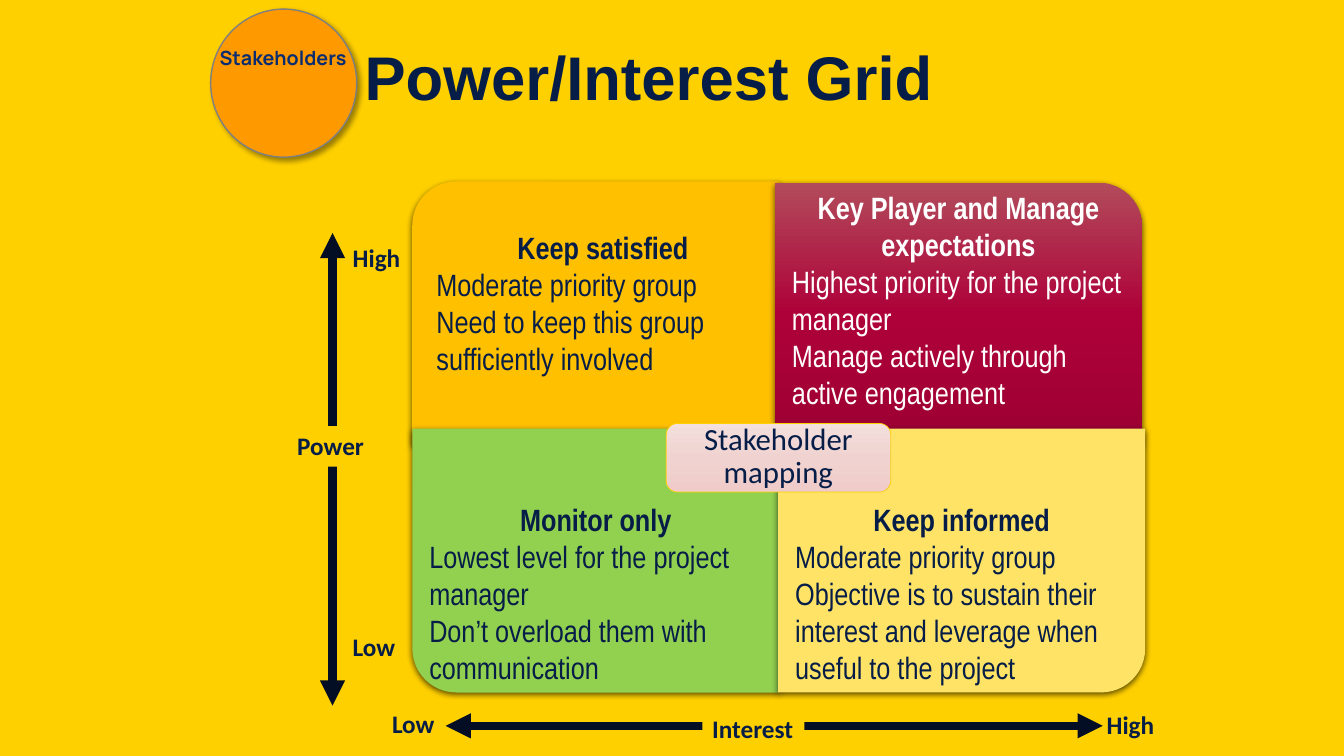
import copy

import lxml.etree
import pptx
import pptx.dml.color
import pptx.enum.dml
import pptx.enum.shapes
import pptx.enum.text
import pptx.oxml.ns
import pptx.util

Cm = pptx.util.Cm
Pt = pptx.util.Pt
qn = pptx.oxml.ns.qn
rgb = pptx.dml.color.RGBColor.from_string
Shape = pptx.enum.shapes.MSO_SHAPE
Align = pptx.enum.text.PP_ALIGN
Anchor = pptx.enum.text.MSO_ANCHOR
FIT = pptx.enum.text.MSO_AUTO_SIZE.SHAPE_TO_FIT_TEXT

theme = {
    "background": "FFD000",
    "navy": "061D48",
    "white": "FFFFFF",
    "axis": "030E24",
    "satisfied": "FFC000",
    "key_player": ["B24B5B", "AE0139", "9C0033"],
    "monitor": "92D050",
    "informed": "FFE366",
    "mapping": ["F4DFDD", "F0D3D0", "EFCCC9"],
    "badge": "FF9900",
    "badge_line": "808080",
    "badge_text": "092D70",
    "title": {"name": "Arial", "size": Pt(44), "bold": True},
    "label": {"name": "Calibri", "size": Pt(18), "bold": True},
    "quadrant": {"name": "Arial Narrow", "size": Pt(22), "bold": True},
    "centre": {"name": "Calibri", "size": Pt(22), "bold": False},
    "stakeholders": {"name": "Manrope", "size": Pt(14), "bold": True},
}

deck = pptx.Presentation()
deck.slide_width = Cm(33.87)
deck.slide_height = Cm(19.05)
page = deck.slides.add_slide(deck.slide_layouts[6])
page.background.fill.solid()
page.background.fill.fore_color.rgb = rgb(theme["background"])


def add_text(at, lines, font, colour, frame_format, para_format):
    box = page.shapes.add_textbox(*map(Cm, at))
    for name, value in frame_format.items():
        setattr(box.text_frame, name, value)
    for index, line in enumerate(lines):
        para = box.text_frame.paragraphs[0] if index == 0 else box.text_frame.add_paragraph()
        for name, value in para_format.items():
            setattr(para, name, value)
        span = para.add_run()
        span.text = line
        for name, value in font.items():
            setattr(span.font, name, value)
        span.font.color.rgb = rgb(colour)
        if index > 0:
            para.alignment = Align.LEFT
            span.font.bold = False
    return box


def add_panel(kind, at, fill, line=None, shadow=None):
    panel = page.shapes.add_shape(kind, *map(Cm, at))
    panel.shadow.inherit = False
    if isinstance(fill, list):
        panel.fill.gradient()
        panel.fill.gradient_angle = 270
        stops = panel._element.spPr.find(".//" + qn("a:gsLst"))
        stops.append(copy.deepcopy(stops[0]))
        for stop, position, colour in zip(panel.fill.gradient_stops, (0, 0.5, 1), fill):
            stop.position = position
            stop.color.rgb = rgb(colour)
    else:
        panel.fill.solid()
        panel.fill.fore_color.rgb = rgb(fill)
    if line:
        panel.line.color.rgb = rgb(line[0])
        panel.line.width = Pt(line[1])
    else:
        panel.line.fill.background()
    if shadow:
        alpha, blur, distance, angle = shadow
        effects = panel._element.spPr.find(qn("a:effectLst"))
        outer = lxml.etree.SubElement(
            effects, qn("a:outerShdw"), blurRad=str(Pt(blur)), dist=str(Pt(distance)),
            dir=str(angle * 60000), rotWithShape="0")
        tint = lxml.etree.SubElement(outer, qn("a:srgbClr"), val="000000")
        lxml.etree.SubElement(tint, qn("a:alpha"), val=str(alpha * 1000))
    return panel


add_text((8.94, 0.18, 21.13, 3.68), ["Power/Interest Grid"], theme["title"], theme["navy"],
         {"word_wrap": True, "vertical_anchor": Anchor.MIDDLE}, {"line_spacing": 0.9})

axes = [
    ((11.23, 18.29, 27.79, 18.29),
     [("Low", 9.63, 17.75, 1.75), ("High", 27.64, 17.78, 1.88), ("Interest", 17.7, 17.88, 2.57)]),
    ((8.38, 5.87, 8.38, 17.78),
     [("Low", 8.64, 15.8, 1.6), ("High", 8.64, 5.99, 1.73), ("Power", 7.24, 10.74, 2.21)]),
]
for ends, labels in axes:
    arrow = page.shapes.add_connector(pptx.enum.shapes.MSO_CONNECTOR.STRAIGHT, *map(Cm, ends))
    arrow.line.color.rgb = rgb(theme["axis"])
    arrow.line.width = Pt(6)
    for tip in ("a:headEnd", "a:tailEnd"):
        lxml.etree.SubElement(arrow.line._get_or_add_ln(), qn(tip), type="triangle")
    lxml.etree.SubElement(arrow._element.spPr, qn("a:effectLst"))
    for word, left, top, width in labels:
        label = add_text((left, top, width, 1.02), [word], theme["label"], theme["navy"],
                         {"word_wrap": False, "auto_size": FIT},
                         {"line_spacing": Pt(21), "space_after": Pt(12)})
        if word in ("Interest", "Power"):
            label.fill.solid()
            label.fill.fore_color.rgb = rgb(theme["background"])

quadrant_width, quadrant_height = 9.25, 6.65
quadrants = [
    (10.39, 4.57, 270, "satisfied", "navy", (10.57, 5.13),
     ["Keep satisfied", "Moderate priority group",
      "Need to keep this group sufficiently involved"]),
    (19.53, 4.6, 0, "key_player", "white", (19.53, 5.05),
     ["Key Player and Manage expectations", "Highest priority for the project manager",
      "Manage actively through active engagement"]),
    (10.39, 10.8, 180, "monitor", "navy", (10.39, 12.45),
     ["Monitor only", "Lowest level for the project manager",
      "Don’t overload them with communication"]),
    (19.61, 10.8, 90, "informed", "navy", (19.61, 12.45),
     ["Keep informed", "Moderate priority group",
      "Objective is to sustain their interest and leverage when useful to the project"]),
]
inset_sides = ("margin_left", "margin_top", "margin_right", "margin_bottom")
quadrant_frame = {"word_wrap": True, "vertical_anchor": Anchor.MIDDLE,
                  **dict.fromkeys(inset_sides, Cm(0.43))}
for left, top, turn, fill, colour, corner, lines in quadrants:
    width, height = quadrant_width, quadrant_height
    if turn in (90, 270):
        shift = (width - height) / 2
        left, top, width, height = left + shift, top - shift, height, width
    panel = add_panel(Shape.ROUND_1_RECTANGLE, (left, top, width, height), theme[fill],
                      shadow=(63, 4.5, 1.5, 90))
    panel.rotation = turn
    add_text((*corner, quadrant_width, 5), lines, theme["quadrant"], theme[colour],
             quadrant_frame, {"alignment": Align.CENTER})

add_panel(Shape.ROUNDED_RECTANGLE, (16.79, 10.67, 5.66, 1.73), theme["mapping"],
          line=(theme["background"], 0.5))
add_text((16.87, 10.74, 5.49, 1.55), ["Stakeholder mapping"], theme["centre"], theme["navy"],
         {"word_wrap": True, "vertical_anchor": Anchor.MIDDLE,
          **dict.fromkeys(inset_sides, Cm(0.23))},
         {"alignment": Align.CENTER, "line_spacing": 0.9})

add_panel(Shape.OVAL, (5.31, 0.23, 3.68, 3.73), theme["badge"],
          line=(theme["badge_line"], 1), shadow=(40, 4, 3, 45))
add_text((5, 1.04, 4.27, 0.86), ["Stakeholders"], theme["stakeholders"], theme["badge_text"],
         {"word_wrap": True, "auto_size": FIT}, {"alignment": Align.CENTER})

deck.save("out.pptx")
